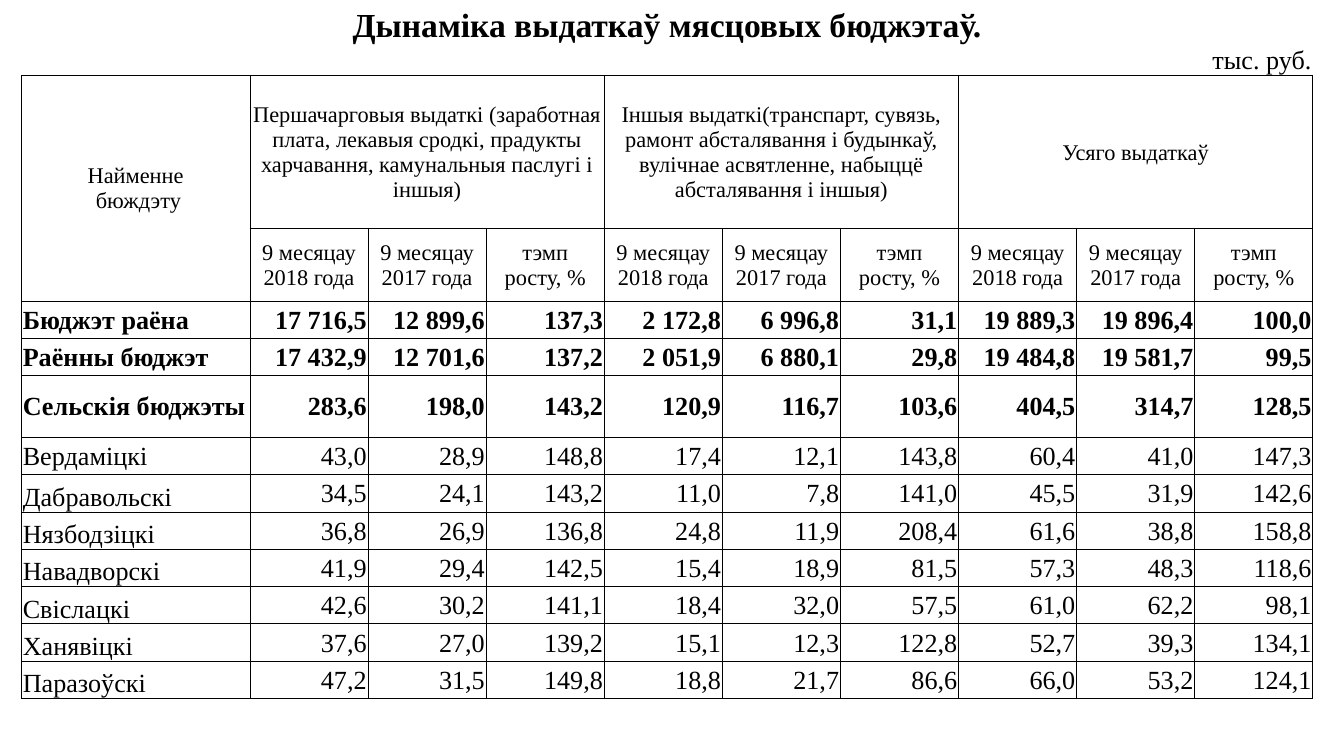
import pptx
import pptx.util
import pptx.dml.color
import pptx.enum.text
import pptx.oxml.ns
from lxml import etree

Inches = pptx.util.Inches
Pt = pptx.util.Pt
ALIGN = pptx.enum.text.PP_ALIGN
ANCHOR = pptx.enum.text.MSO_ANCHOR
qn = pptx.oxml.ns.qn

TITLE = "Дынаміка выдаткаў мясцовых бюджэтаў."
UNIT = "тыс. руб."
NAME = "Найменне\n бюждэту"
GROUPS = [
    "Першачарговыя выдаткі (заработная плата, лекавыя сродкі, прадукты харчавання, "
    "камунальныя паслугі і іншыя)",
    "Іншыя выдаткі(транспарт, сувязь, рамонт абсталявання і будынкаў, "
    "вулічнае асвятленне, набыццё абсталявання і іншыя)",
    "Усяго выдаткаў",
]
RATE = "тэмп\nросту, %"
FIRST = ["9 месяцау\n2018 года", "9 месяцау\n2017 года", RATE]
OTHER = ["9 месяцау 2018 года", "9 месяцау 2017 года", RATE]
HEADS = FIRST + OTHER * 2
TOTALS = [
    ("Бюджэт раёна", "17 716,5", "12 899,6", "137,3", "2 172,8", "6 996,8", "31,1",
     "19 889,3", "19 896,4", "100,0"),
    ("Раённы бюджэт", "17 432,9", "12 701,6", "137,2", "2 051,9", "6 880,1", "29,8",
     "19 484,8", "19 581,7", "99,5"),
    ("Сельскія бюджэты", "283,6", "198,0", "143,2", "120,9", "116,7", "103,6",
     "404,5", "314,7", "128,5"),
]
LOCAL = [
    ("Вердаміцкі", "43,0", "28,9", "148,8", "17,4", "12,1", "143,8", "60,4", "41,0", "147,3"),
    ("Дабравольскі", "34,5", "24,1", "143,2", "11,0", "7,8", "141,0", "45,5", "31,9", "142,6"),
    ("Нязбодзіцкі", "36,8", "26,9", "136,8", "24,8", "11,9", "208,4", "61,6", "38,8", "158,8"),
    ("Навадворскі", "41,9", "29,4", "142,5", "15,4", "18,9", "81,5", "57,3", "48,3", "118,6"),
    ("Свіслацкі", "42,6", "30,2", "141,1", "18,4", "32,0", "57,5", "61,0", "62,2", "98,1"),
    ("Ханявіцкі", "37,6", "27,0", "139,2", "15,1", "12,3", "122,8", "52,7", "39,3", "134,1"),
    ("Паразоўскі", "47,2", "31,5", "149,8", "18,8", "21,7", "86,6", "66,0", "53,2", "124,1"),
]
THEME = {"font": "Times New Roman", "ink": "000000", "title": 18, "body": 14,
         "head": 12, "blank": 8, "line": 0.5}

WIDE = 10
TALL = WIDE * 9 / 16
LEFT, TOP = 0.16, 0.03
WIDTHS = [1.7] + [7.91 / 9] * 9
SLIM = 2.5 / 9
HEIGHTS = [0.3, 0.23, 1.14, 0.54, SLIM, SLIM, 0.46] + [SLIM] * 7


def write(cell, text, size=THEME["body"], bold=False, align=ALIGN.CENTER, anchor=ANCHOR.MIDDLE):
    frame = cell.text_frame
    frame.text = text
    cell.vertical_anchor = anchor
    for para in frame.paragraphs:
        para.alignment = align
        for run in para.runs:
            font = run.font
            font.name = THEME["font"]
            font.size = Pt(size)
            font.bold = bold
            font.color.rgb = pptx.dml.color.RGBColor.from_string(THEME["ink"])


def frame_cell(cell, sides):
    props = cell._tc.get_or_add_tcPr()
    for side in "LRTB":
        line = etree.SubElement(props, qn("a:ln" + side), w=str(Pt(THEME["line"])))
        if side in sides:
            fill = etree.SubElement(line, qn("a:solidFill"))
            etree.SubElement(fill, qn("a:srgbClr"), val=THEME["ink"])
        else:
            etree.SubElement(line, qn("a:noFill"))
    cell.fill.background()
    cell.margin_left = cell.margin_right = cell.margin_top = Inches(0.01)
    cell.margin_bottom = 0


def main():
    deck = pptx.Presentation()
    deck.slide_width, deck.slide_height = Inches(WIDE), Inches(TALL)
    slide = deck.slides.add_slide(deck.slide_layouts[6])
    table = slide.shapes.add_table(
        len(HEIGHTS), len(WIDTHS), Inches(LEFT), Inches(TOP),
        Inches(sum(WIDTHS)), Inches(sum(HEIGHTS))).table
    table.first_row = table.horz_banding = False
    for col, width in zip(table.columns, WIDTHS):
        col.width = Inches(width)
    for row, height in zip(table.rows, HEIGHTS):
        row.height = Inches(height)

    for r in range(len(HEIGHTS)):
        for c in range(len(WIDTHS)):
            frame_cell(table.cell(r, c), ("", "B")[r] if r < 2 else "LRTB")

    spans = [(0, 0, 0, 9), (2, 0, 3, 0)]
    spans += [(1, c, 1, c + 1) for c in (1, 3, 5)]
    spans += [(2, c, 2, c + 2) for c in (1, 4, 7)]
    for r, c, end, last in spans:
        table.cell(r, c).merge(table.cell(end, last))

    write(table.cell(0, 0), TITLE, size=THEME["title"], bold=True, anchor=ANCHOR.BOTTOM)
    write(table.cell(1, 9), UNIT, align=ALIGN.RIGHT, anchor=ANCHOR.BOTTOM)
    write(table.cell(2, 0), NAME, size=THEME["head"])
    for i, text in enumerate(GROUPS):
        write(table.cell(2, 1 + 3 * i), text, size=THEME["head"])
    for c, text in enumerate(HEADS, 1):
        write(table.cell(3, c), text, size=THEME["head"])

    for r, (name, *values) in enumerate(TOTALS + LOCAL, 4):
        bold = r < 4 + len(TOTALS)
        low = r > 4 + len(TOTALS)
        write(table.cell(r, 0), name, bold=bold, align=ALIGN.LEFT,
              anchor=ANCHOR.BOTTOM if low else ANCHOR.MIDDLE)
        for c, text in enumerate(values, 1):
            write(table.cell(r, c), text, bold=bold, align=ALIGN.RIGHT)

    for cell in table.iter_cells():
        if not cell.text_frame.text:
            para = cell.text_frame.paragraphs[0]._p
            etree.SubElement(para, qn("a:endParaRPr"), sz=str(THEME["blank"] * 100))

    deck.save("out.pptx")


if __name__ == "__main__":
    main()
